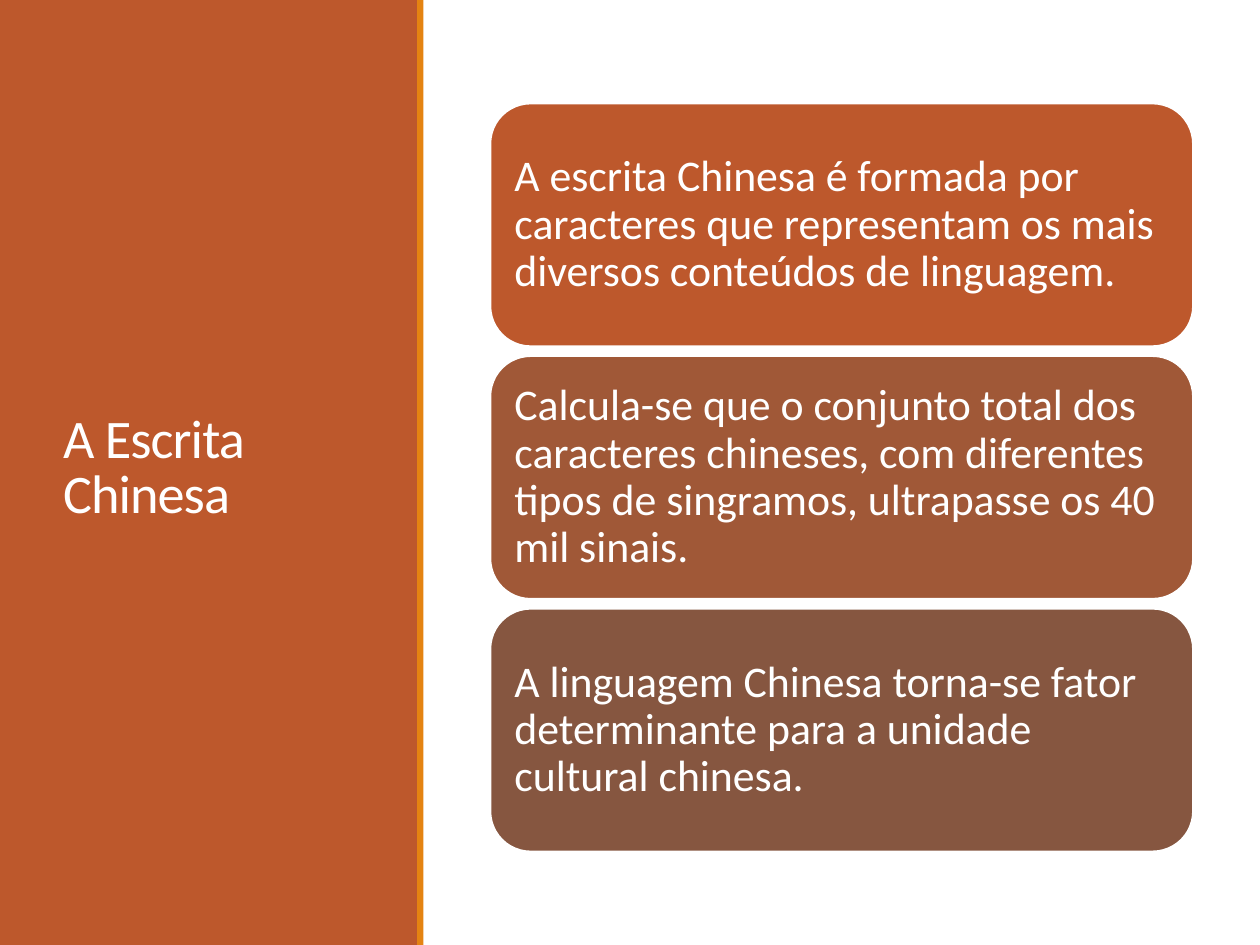
from pptx import Presentation
from pptx.dml.color import RGBColor
from pptx.enum.shapes import MSO_SHAPE
from pptx.enum.text import MSO_ANCHOR, MSO_AUTO_SIZE, PP_ALIGN
from pptx.util import Inches, Pt

RECT, ROUNDED = MSO_SHAPE.RECTANGLE, MSO_SHAPE.ROUNDED_RECTANGLE
MIDDLE, LEFT = MSO_ANCHOR.MIDDLE, PP_ALIGN.LEFT
NO_FIT = MSO_AUTO_SIZE.NONE

WHITE = RGBColor(0xFF, 0xFF, 0xFF)
RUST = RGBColor(0xBD, 0x58, 0x2C)
ORANGE = RGBColor(0xE4, 0x83, 0x12)
SIENNA = RGBColor(0xA0, 0x58, 0x37)
BROWN = RGBColor(0x86, 0x56, 0x40)

SLIDE_W, SLIDE_H = 10, 7.5
PANEL_W = 3.32
CARD_LEFT, CARD_TOP = 3.89, 0.82
CARD_W, CARD_H = 5.58, 1.93
CARD_STEP = 2.005

CARDS = [
    (RUST, "A escrita Chinesa é formada por caracteres que representam "
           "os mais diversos conteúdos de linguagem."),
    (SIENNA, "Calcula-se que o conjunto total dos caracteres chineses, com "
             "diferentes tipos de singramos, ultrapasse os 40 mil sinais."),
    (BROWN, "A linguagem Chinesa torna-se fator determinante para a unidade "
            "cultural chinesa."),
]


def add_box(kind, left, top, width, height, color):
    sp = slide.shapes.add_shape(kind, Inches(left), Inches(top),
                                Inches(width), Inches(height))
    sp.shadow.inherit = False
    sp.fill.solid()
    sp.fill.fore_color.rgb = color
    sp.line.fill.background()
    return sp


def write_text(sp, text, size, line_spacing):
    tf = sp.text_frame
    tf.word_wrap = True
    tf.auto_size = NO_FIT
    tf.vertical_anchor = MIDDLE
    p = tf.paragraphs[0]
    p.alignment = LEFT
    p.line_spacing = line_spacing
    r = p.add_run()
    r.text = text
    r.font.name = "Calibri"
    r.font.size = Pt(size)
    r.font.color.rgb = WHITE
    return r


prs = Presentation()
prs.slide_width, prs.slide_height = Inches(SLIDE_W), Inches(SLIDE_H)
slide = prs.slides.add_slide(prs.slide_layouts[5])  # Title Only

# Side panel with its accent stripe
panel = add_box(RECT, 0, 0, PANEL_W, SLIDE_H, RUST)
add_box(RECT, PANEL_W - 0.01, 0, 0.05, SLIDE_H, ORANGE)

# Title, brought in front of the panel
title = slide.shapes.title
title.left, title.top = Inches(0.4), Inches(0.57)
title.width, title.height = Inches(2.53), Inches(6.31)
r = write_text(title, "A Escrita Chinesa", 31, 0.85)
r.font._element.set("spc", "-50")
panel._element.addnext(title._element)

# Stacked cards
for row, (color, text) in enumerate(CARDS):
    card = add_box(ROUNDED, CARD_LEFT, CARD_TOP + row * CARD_STEP,
                   CARD_W, CARD_H, color)
    card.line.color.rgb = WHITE
    card.line.width = Pt(1.25)
    tf = card.text_frame
    tf.margin_left = tf.margin_right = Inches(0.1)
    tf.margin_top = tf.margin_bottom = Inches(0.1)
    write_text(card, text, 25, 0.9)

prs.save("out.pptx")
